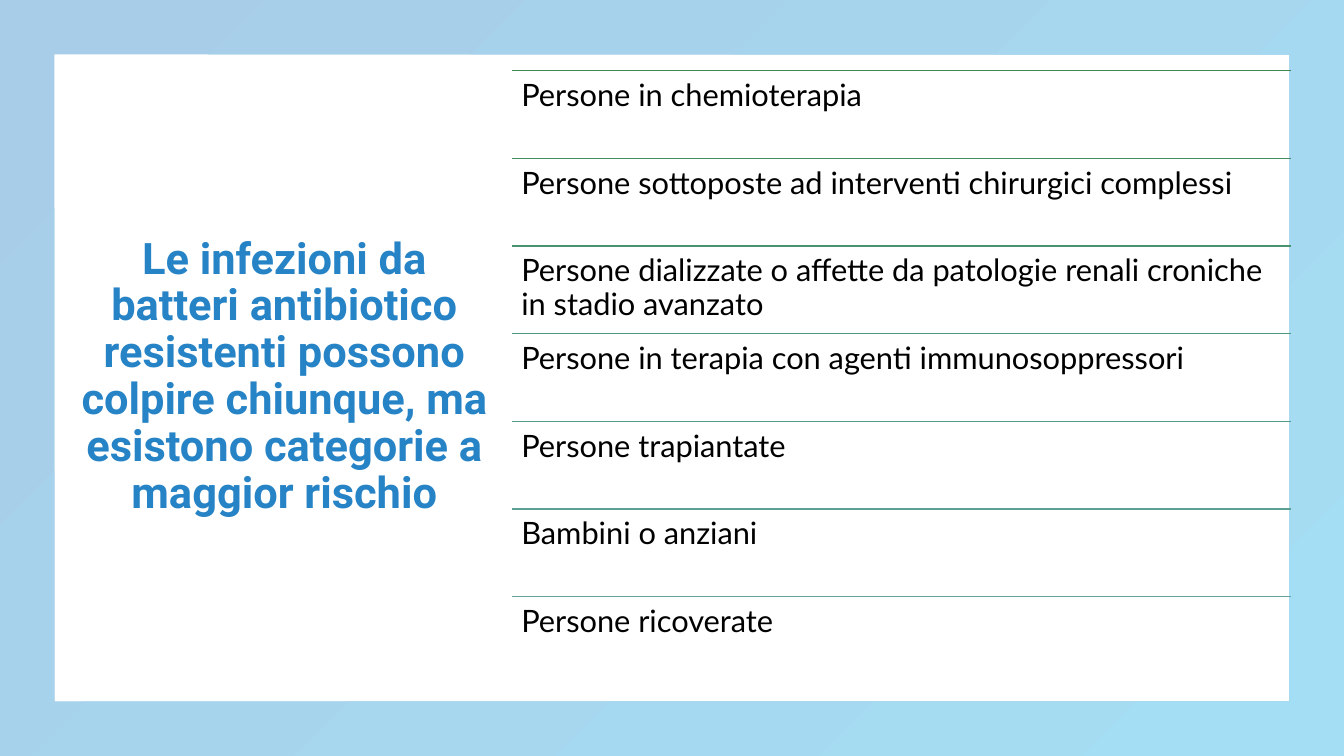
"""Build a slide listing the groups most at risk from resistant infections."""
from lxml.etree import SubElement
from pptx import Presentation
from pptx.dml.color import RGBColor as Rgb
from pptx.enum.shapes import MSO_CONNECTOR as Conn, MSO_SHAPE as Shape
from pptx.enum.text import MSO_ANCHOR as Anchor, PP_ALIGN as Align
from pptx.oxml.ns import qn
from pptx.util import Pt

TITLE = ("Le infezioni da batteri antibiotico resistenti possono colpire "
         "chiunque, ma esistono categorie a maggior rischio")
GROUPS = [
    ("Persone in chemioterapia", Rgb(0x3E, 0x88, 0x53)),
    ("Persone sottoposte ad interventi chirurgici complessi", Rgb(0x43, 0x8D, 0x60)),
    ("Persone dializzate o affette da patologie renali croniche in stadio avanzato",
     Rgb(0x49, 0x92, 0x6E)),
    ("Persone in terapia con agenti immunosoppressori", Rgb(0x4E, 0x97, 0x7B)),
    ("Persone trapiantate", Rgb(0x54, 0x9C, 0x88)),
    ("Bambini o anziani", Rgb(0x5A, 0xA0, 0x94)),
    ("Persone ricoverate", Rgb(0x62, 0xA3, 0x9F)),
]
BLUE = Rgb(0x26, 0x83, 0xC6)
BLACK = Rgb(0, 0, 0)
EDGES = [Rgb(0xA8, 0xCD, 0xE8), Rgb(0xA4, 0xDE, 0xF4)]
WIDE, HIGH = 960, 540
LEFT, TOP, SPAN, STEP = 365.8, 50.4, 556, 62.65


def add_text(slide, text, box, inset, font, size, color):
    """Add a wrapped text box and return its frame and paragraph."""
    frame = slide.shapes.add_textbox(*map(Pt, box)).text_frame
    frame.word_wrap = True
    frame.margin_left = frame.margin_right = Pt(inset)
    frame.margin_top = frame.margin_bottom = Pt(inset)
    para = frame.paragraphs[0]
    para.text = text
    para.line_spacing = 0.9
    para.font.name = font
    para.font.size = Pt(size)
    para.font.color.rgb = color
    return frame, para


def add_border(slide):
    """Draw the gradient frame around the slide."""
    border = slide.shapes.add_shape(Shape.FRAME, 0, 0, Pt(WIDE), Pt(HIGH))
    border.adjustments[0] = 0.072
    border.shadow.inherit = False
    border.line.fill.background()
    border.fill.gradient()
    border.fill.gradient_angle = 315
    for stop, color in zip(border.fill.gradient_stops, EDGES):
        stop.color.rgb = color


def add_rule(slide, y, color):
    """Draw the line above one group."""
    rule = slide.shapes.add_connector(
        Conn.STRAIGHT, Pt(LEFT), Pt(y), Pt(LEFT + SPAN), Pt(y))
    rule.line.color.rgb = color
    rule.line.width = Pt(1)
    SubElement(rule.element.spPr, qn("a:effectLst"))


def main():
    """Build and save the slide."""
    deck = Presentation()
    deck.slide_width, deck.slide_height = Pt(WIDE), Pt(HIGH)
    slide = deck.slides.add_slide(deck.slide_layouts[6])
    add_border(slide)
    frame, title = add_text(slide, TITLE, (54, 38, 298, 463), 0, "Roboto", 31, BLUE)
    frame.vertical_anchor = Anchor.MIDDLE
    title.alignment = Align.CENTER
    title.font.bold = True
    for row, (text, color) in enumerate(GROUPS):
        y = TOP + row * STEP
        add_rule(slide, y, color)
        add_text(slide, text, (LEFT, y, SPAN, STEP), 6.6, "Lato", 22, BLACK)
    deck.save("out.pptx")


if __name__ == "__main__":
    main()
